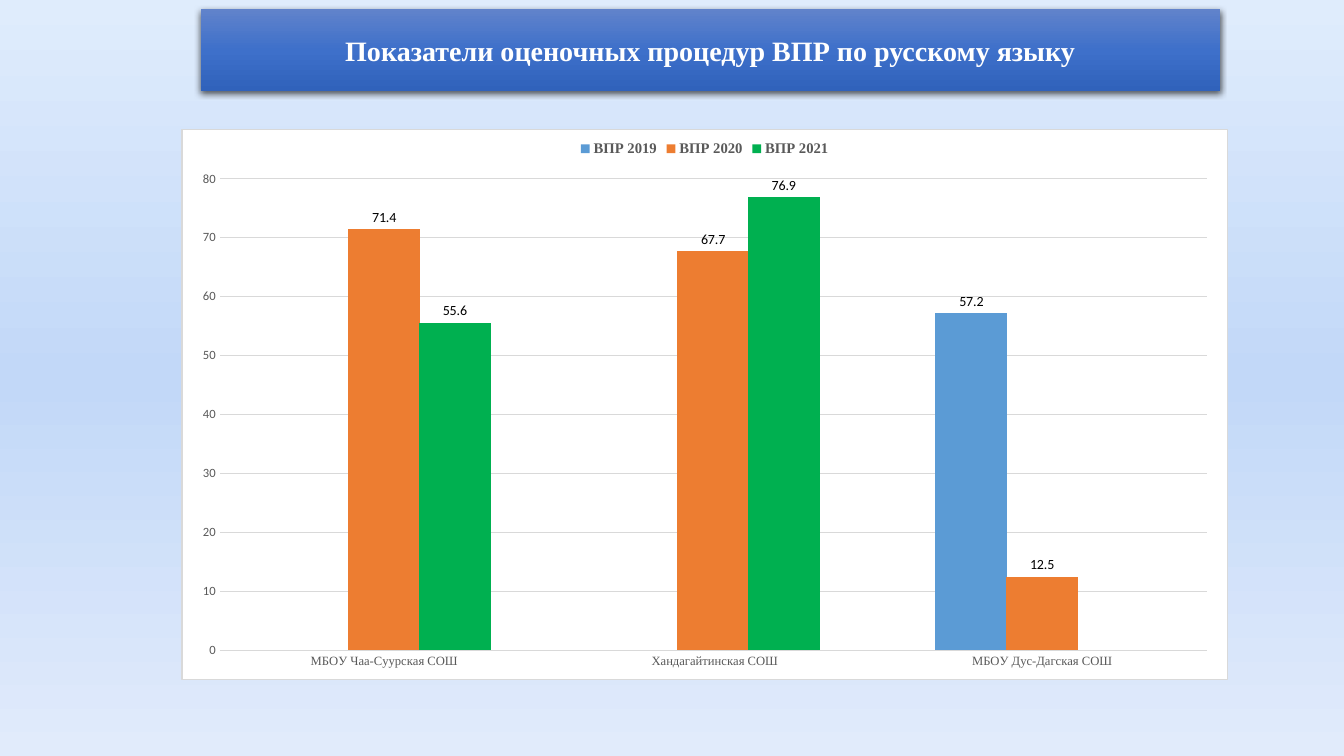
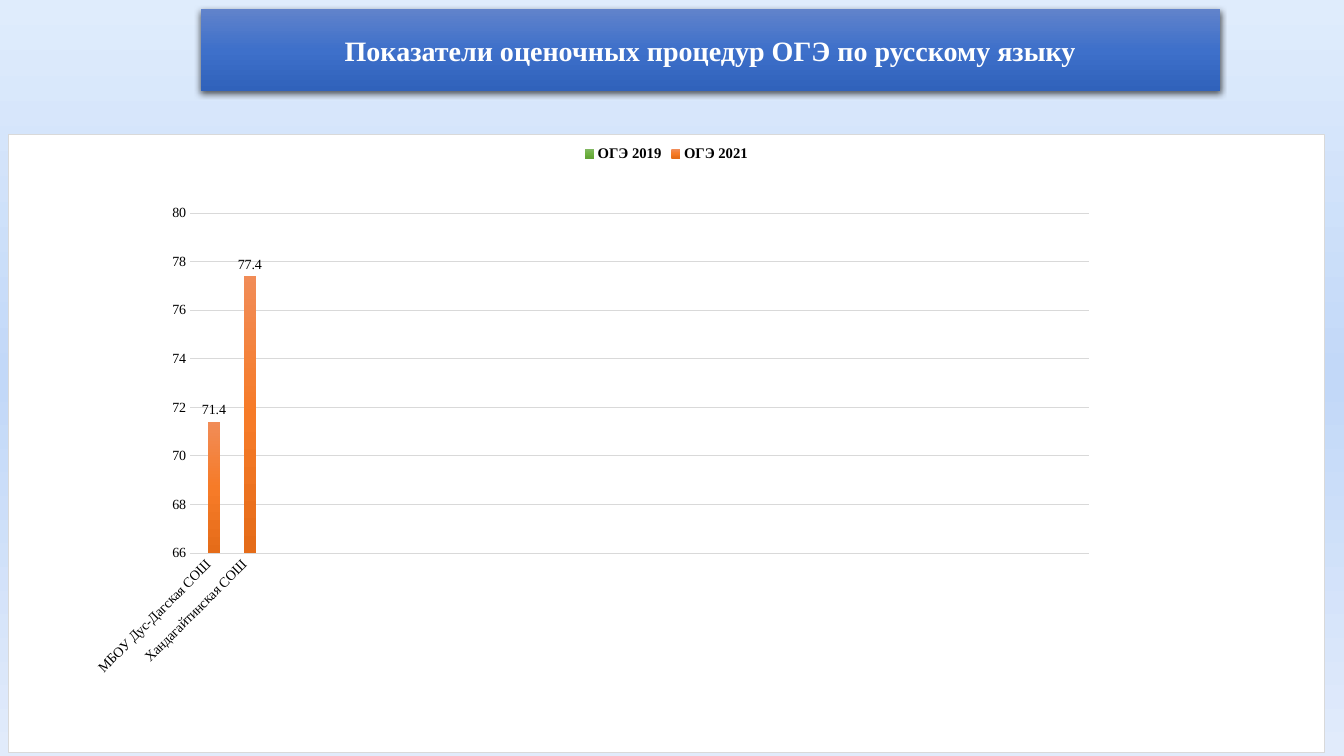
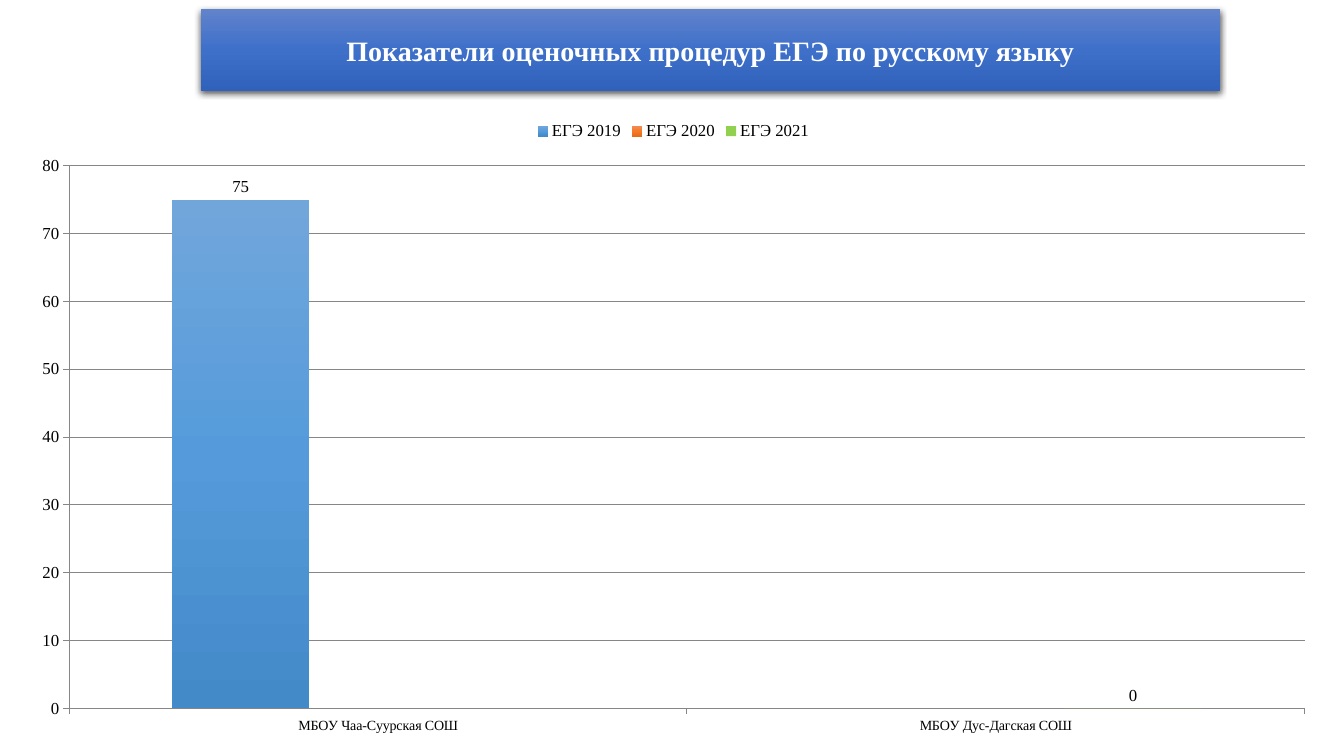
from pptx import Presentation
from pptx.chart.data import CategoryChartData as Data
from pptx.dml.color import RGBColor as Rgb
from pptx.enum.chart import XL_CHART_TYPE as Kind
from pptx.enum.chart import XL_LABEL_POSITION as Spot
from pptx.enum.chart import XL_LEGEND_POSITION as Side
from pptx.enum.chart import XL_TICK_MARK as Tick
from pptx.enum.shapes import MSO_SHAPE as Form
from pptx.enum.text import MSO_ANCHOR as Anchor
from pptx.enum.text import PP_ALIGN as Align
from pptx.oxml import parse_xml
from pptx.oxml.ns import nsdecls, qn
from pptx.util import Inches, Pt

SERIF, SANS = "Times New Roman", "Calibri"
HUES = {
    "white": "FFFFFF", "black": "000000", "text": "595959",
    "rule": "D9D9D9", "axis": "868686",
    "blue": "5B9BD5", "orange": "ED7D31", "green": "00B050", "lime": "92D050",
}
# Top, middle and bottom colours of the vertical gradients
FADES = {
    "sky": ("DFECFC", "C2D8F8", "E1EBFB"),
    "band": ("6183CB", "3E70CA", "3062BB"),
    "blue fade": ("71A6DB", "559BDB", "438AC9"),
    "orange fade": ("F18C57", "F67B28", "E56C19"),
    "green fade": ("81B861", "6FB242", "62A336"),
}
CHAA, DUS, KHAN = "МБОУ Чаа-Суурская СОШ", "МБОУ Дус-Дагская СОШ", " Хандагайтинская СОШ"


def tint(name):
    return Rgb.from_string(HUES[name])


def paint(fill, root, name):
    """Fill with a plain colour or a three-stop fade; root holds the fill's XML."""
    if name in HUES:
        fill.solid()
        fill.fore_color.rgb = tint(name)
        return
    fill.gradient()
    fill.gradient_angle = 270
    stops = root.find(".//" + qn("a:gsLst"))
    for stop in list(stops):
        stops.remove(stop)
    for i, hue in enumerate(FADES[name]):
        stops.append(parse_xml(
            f'<a:gs {nsdecls("a")} pos="{i * 50000}"><a:srgbClr val="{hue}"/></a:gs>'))


def style(font, size=None, color=None, bold=None, face=None):
    if size:
        font.size = Pt(size)
    if color:
        font.color.rgb = tint(color)
    if bold is not None:
        font.bold = bold
    if face:
        font.name = face


def say(frame, text, align=Align.CENTER, **form):
    para = frame.paragraphs[0]
    para.alignment = align
    run = para.add_run()
    run.text = text
    style(run.font, **form)


def stroke(line, color):
    line.color.rgb = tint(color)
    line.width = Pt(0.75)


class Deck:
    def __init__(self):
        self.file = Presentation()
        self.file.slide_width, self.file.slide_height = Inches(13.33), Inches(7.5)
        self.slide = None

    def page(self, title, back):
        self.slide = self.file.slides.add_slide(self.file.slide_layouts[6])
        paint(self.slide.background.fill, self.slide.element, back)
        self.band(title)

    def band(self, text):
        box = self.slide.shapes.add_shape(
            Form.RECTANGLE, Inches(1.99), Inches(0.09), Inches(10.11), Inches(0.81))
        paint(box.fill, box.element, "band")
        box.line.fill.background()
        box.shadow.inherit = False
        box.element.find(".//" + qn("a:effectLst")).append(parse_xml(
            f'<a:outerShdw {nsdecls("a")} blurRad="{Pt(4.5)}" dist="{Pt(1.5)}" '
            'dir="5400000" algn="ctr" rotWithShape="0"><a:srgbClr val="000000">'
            '<a:alpha val="63000"/></a:srgbClr></a:outerShdw>'))
        frame = box.text_frame
        frame.word_wrap = True
        frame.vertical_anchor = Anchor.MIDDLE
        say(frame, text, size=20, color="white", bold=True, face=SERIF)

    def chart(self, at, cats, rows, font, legend=None, ticks=None, cat=None,
              low=0, step=10, gap=150, overlap=0, rule="rule", card=True):
        """Clustered columns; rows are (name, values, colour)."""
        data = Data()
        data.categories = cats
        for name, vals, _ in rows:
            data.add_series(name, vals)
        chart = self.slide.shapes.add_chart(
            Kind.COLUMN_CLUSTERED, *map(Inches, at), data).chart
        style(chart.font, **font)
        chart.has_title = False
        chart.has_legend = True
        chart.legend.position = Side.TOP
        chart.legend.include_in_layout = False
        style(chart.legend.font, **(legend or font))

        plot = chart.plots[0]
        plot.vary_by_categories = False
        plot.gap_width, plot.overlap = gap, overlap
        nodes = chart.element.iter(qn("c:ser"))
        for row, node, (_, _, color) in zip(plot.series, nodes, rows):
            paint(row.format.fill, node, color)
            labels = row.data_labels
            labels.show_value = True
            labels.position = Spot.OUTSIDE_END
            style(labels.font, **font)

        base, scale = chart.category_axis, chart.value_axis
        scale.minimum_scale, scale.maximum_scale = low, 80
        scale.major_unit = step
        scale.has_major_gridlines = True
        stroke(scale.major_gridlines.format.line, rule)
        for axis, form in ((base, cat or ticks), (scale, ticks)):
            axis.major_tick_mark = Tick.NONE if card else Tick.OUTSIDE
            axis.minor_tick_mark = Tick.NONE
            stroke(axis.format.line, rule)
            style(axis.tick_labels.font, **(form or font))
        if card:
            scale.format.line.fill.background()
            self.card(chart)
        return chart

    def card(self, chart):
        """White panel with a thin border behind the chart."""
        chart.element.find(qn("c:txPr")).addprevious(parse_xml(
            f'<c:spPr {nsdecls("c", "a")}><a:solidFill><a:srgbClr val="{HUES["white"]}"/>'
            f'</a:solidFill><a:ln w="{Pt(0.75)}"><a:solidFill>'
            f'<a:srgbClr val="{HUES["rule"]}"/></a:solidFill></a:ln></c:spPr>'))

    def inset(self, chart, at, wide, high):
        """Fix the inner plot area, in inches within a chart of the given size."""
        area = chart.element.find(".//" + qn("c:plotArea"))
        for old in area.findall(qn("c:layout")):
            area.remove(old)
        sizes = "".join(f'<c:{tag} val="{val / full}"/>' for tag, val, full
                        in zip("xywh", at, (wide, high) * 2))
        area.insert(0, parse_xml(
            f'<c:layout {nsdecls("c")}><c:manualLayout><c:layoutTarget val="inner"/>'
            f'<c:xMode val="edge"/><c:yMode val="edge"/>{sizes}'
            '</c:manualLayout></c:layout>'))

    def slant(self, chart):
        """Turn the category labels by 45 degrees."""
        axis = chart.element.find(".//" + qn("c:catAx"))
        body = axis.find(qn("c:txPr")).find(qn("a:bodyPr"))
        body.set("rot", str(-45 * 60000))
        body.set("vert", "horz")

    def trim(self, chart):
        """Drop the empty category names but keep their places."""
        for cat in chart.element.iter(qn("c:cat")):
            for point in list(cat.iter(qn("c:pt"))):
                if not point.find(qn("c:v")).text:
                    point.getparent().remove(point)


def main():
    deck = Deck()
    title = "Показатели оценочных процедур {} по русскому языку"

    deck.page(title.format("ВПР"), "sky")
    small = dict(size=9, color="text")
    deck.chart(
        (1.8, 1.28, 10.38, 5.47), [CHAA, KHAN, DUS],
        [("ВПР 2019", (None, None, 57.2), "blue"),
         ("ВПР 2020", (71.4, 67.7, 12.5), "orange"),
         ("ВПР 2021", (55.6, 76.9, None), "green")],
        font=dict(size=10, color="black", face=SANS),
        legend=dict(size=10.5, color="text", bold=True, face=SERIF),
        ticks=dict(small, face=SANS), cat=dict(small, face=SERIF),
        gap=160, overlap=2)

    deck.page(title.format("ОГЭ"), "sky")
    plain = dict(size=10, color="black", face=SERIF)
    free = 23
    wide, high = 13.06, 6.14
    chart = deck.chart(
        (0.08, 1.33, wide, high), [DUS, KHAN] + [""] * free,
        [("ОГЭ 2019", [None] * (free + 2), "green fade"),
         ("ОГЭ 2021", [71.4, 77.4] + [None] * free, "orange fade")],
        font=plain, legend=dict(plain, size=10.5, bold=True),
        low=66, step=2, gap=99)
    deck.inset(chart, (1.8, 0.78, 8.92, 3.38), wide, high)
    deck.slant(chart)
    deck.trim(chart)

    deck.page(title.format("ЕГЭ"), "white")
    deck.chart(
        (0.16, 1.1, 13.04, 6.31), [CHAA, DUS],
        [("ЕГЭ 2019", (75, None), "blue fade"),
         ("ЕГЭ 2020", (None, None), "orange fade"),
         ("ЕГЭ 2021", (None, 0), "lime")],
        font=dict(plain, size=12), cat=plain, rule="axis", card=False)

    deck.file.save("out.pptx")


if __name__ == "__main__":
    main()
